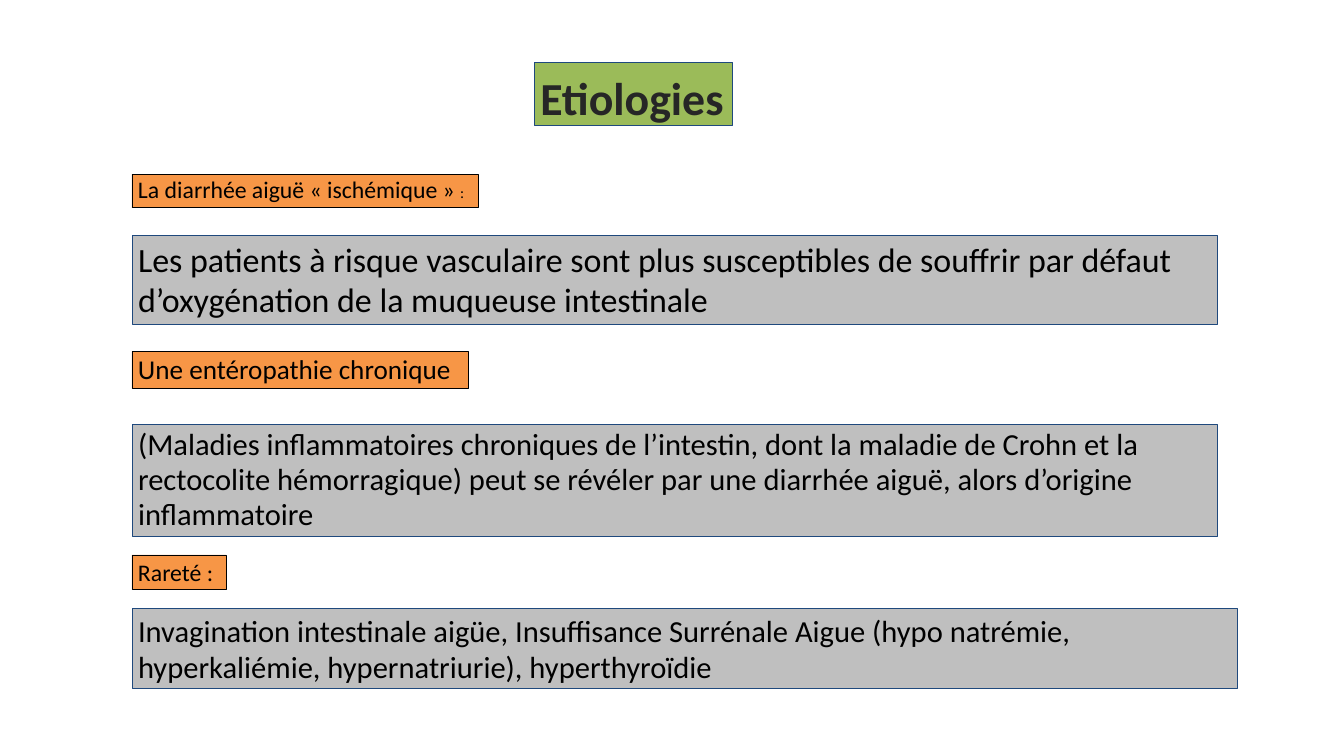
from dataclasses import dataclass

from pptx import Presentation, util as u
from pptx.dml.color import RGBColor
from pptx.enum import shapes, text


@dataclass(frozen=True)
class Theme:
    font: str = "Calibri"
    title_fill: str = "9BBB59"
    title_ink: str = "262626"
    cause_fill: str = "F79646"
    detail_fill: str = "BFBFBF"
    ink: str = "000000"
    blue_line: str = "1F497D"
    title_size: int = 54
    large: int = 40
    medium: int = 36
    label: int = 32
    small: int = 28
    colon: int = 18


theme = Theme()


def style_box(box, fill, line, spacing):
    """Paint a box and set up its text frame; return its first paragraph."""
    box.fill.solid()
    box.fill.fore_color.rgb = RGBColor.from_string(fill)
    box.line.color.rgb = RGBColor.from_string(line)
    box.line.width = u.Pt(0.75)
    frame_format = {
        "word_wrap": True,
        "auto_size": text.MSO_AUTO_SIZE.NONE,
        "vertical_anchor": text.MSO_ANCHOR.TOP,
    }
    for name, value in frame_format.items():
        setattr(box.text_frame, name, value)
    paragraph = box.text_frame.paragraphs[0]
    paragraph_format = {
        "alignment": text.PP_ALIGN.LEFT,
        "line_spacing": spacing,
        "space_before": u.Pt(0),
    }
    for name, value in paragraph_format.items():
        setattr(paragraph, name, value)
    return paragraph


def add_words(paragraph, words, size, color, bold=False):
    run = paragraph.add_run()
    run.text = words
    font_format = {"name": theme.font, "size": u.Pt(size), "bold": bold}
    for name, value in font_format.items():
        setattr(run.font, name, value)
    run.font.color.rgb = RGBColor.from_string(color)


# Slide
deck = Presentation()
deck.slide_width = u.Inches(21.99)
deck.slide_height = u.Inches(12.37)
slide = deck.slides.add_slide(deck.slide_layouts[5])

# Title
title = slide.shapes.title
title_place = {"left": 8.74, "top": 1.02, "width": 3.25, "height": 1.03}
for side, length in title_place.items():
    setattr(title, side, u.Inches(length))
heading = style_box(title, theme.title_fill, theme.blue_line, 1.07)
add_words(heading, "Etiologies", theme.title_size, theme.title_ink, bold=True)

# Causes and their details: top, width, height, line spacing, runs
cause_look = (theme.cause_fill, theme.ink)
detail_look = (theme.detail_fill, theme.blue_line)
left_edge = 2.16
etiologies = [
    (cause_look, 2.85, 5.66, 0.55, 0.95, [
        ("La diarrhée aiguë « ischémique » ", theme.small),
        (":", theme.colon)]),
    (detail_look, 3.85, 17.75, 1.45, 1.0, [
        ("Les patients à risque vasculaire sont plus susceptibles de souffrir "
         "par défaut d’oxygénation de la muqueuse intestinale", theme.large)]),
    (cause_look, 5.75, 5.5, 0.61, 0.95, [
        ("Une entéropathie chronique", theme.label)]),
    (detail_look, 6.95, 17.75, 1.83, 0.95, [
        ("(Maladies inflammatoires chroniques de l’intestin, dont la maladie "
         "de Crohn et la rectocolite hémorragique) peut se révéler par une "
         "diarrhée aiguë, alors d’origine inflammatoire", theme.medium)]),
    (cause_look, 9.08, 1.54, 0.57, 1.0, [("Rareté :", theme.small)]),
    (detail_look, 9.96, 18.09, 1.31, 1.0, [
        ("Invagination intestinale aigüe, Insuffisance Surrénale Aigue (hypo "
         "natrémie, hyperkaliémie, hypernatriurie), hyperthyroïdie",
         theme.medium)]),
]
for (fill, line), top, width, height, spacing, runs in etiologies:
    etiology = slide.shapes.add_shape(
        shapes.MSO_SHAPE.RECTANGLE, u.Inches(left_edge), u.Inches(top),
        u.Inches(width), u.Inches(height))
    etiology.shadow.inherit = False
    statement = style_box(etiology, fill, line, spacing)
    for words, size in runs:
        add_words(statement, words, size, theme.ink)

deck.save("out.pptx")
